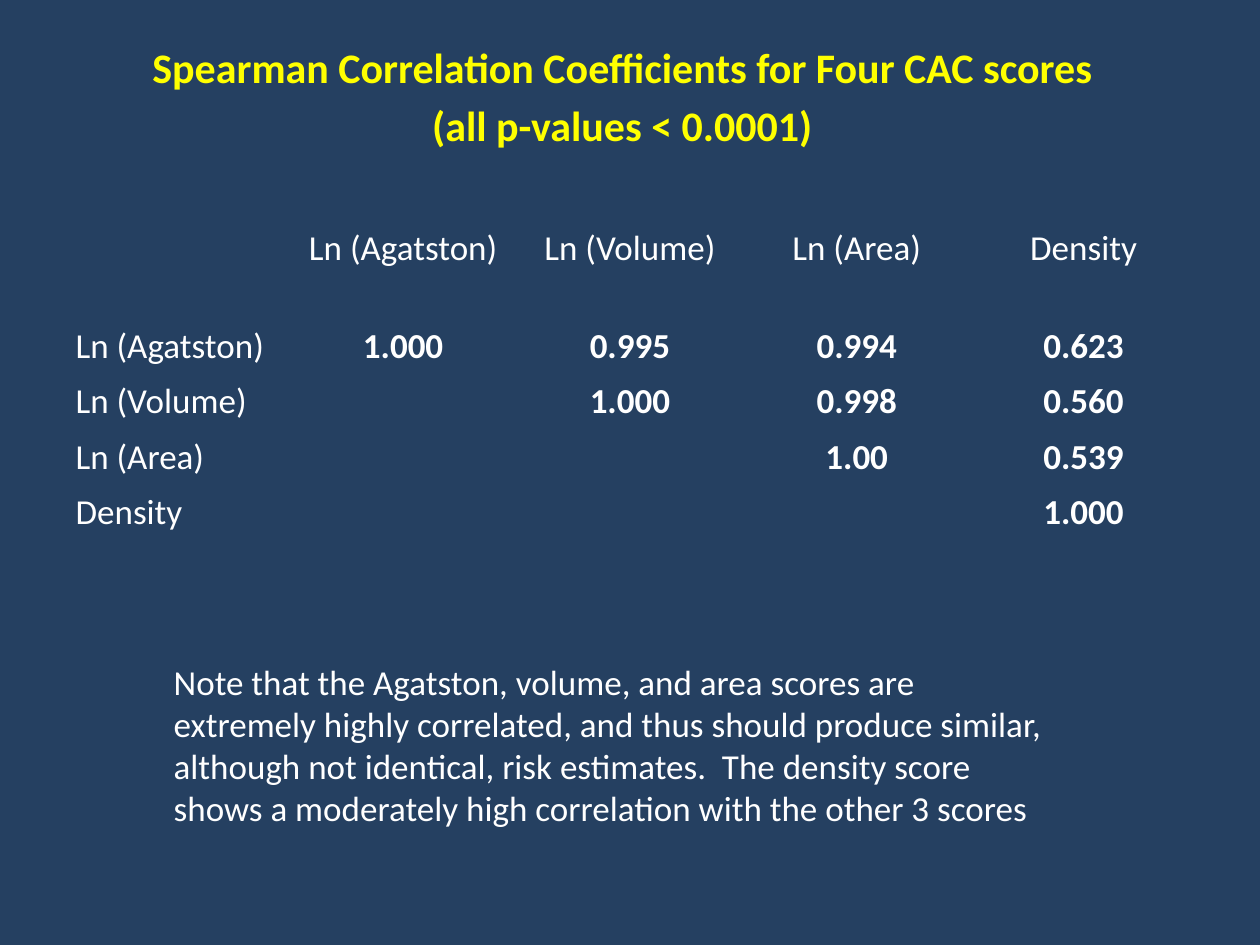
from dataclasses import dataclass

from lxml import etree
from pptx import Presentation
from pptx.dml.color import RGBColor
from pptx.enum.text import MSO_ANCHOR, MSO_AUTO_SIZE, PP_ALIGN
from pptx.oxml.ns import qn
from pptx.util import Inches, Pt

LEFT, CENTER = PP_ALIGN.LEFT, PP_ALIGN.CENTER
MIDDLE = MSO_ANCHOR.MIDDLE
NO_FIT = MSO_AUTO_SIZE.NONE


@dataclass(frozen=True)
class Theme:
    font: str = "Calibri"
    back: RGBColor = RGBColor(0x25, 0x40, 0x61)
    head: RGBColor = RGBColor(0xFF, 0xFF, 0x00)
    body: RGBColor = RGBColor(0xFF, 0xFF, 0xFF)
    head_size: int = 24
    body_size: int = 20


THEME = Theme()
TITLE = "Spearman Correlation Coefficients for Four CAC scores\v(all p-values < 0.0001)"
SCORES = ["Ln (Agatston)", "Ln (Volume)", "Ln (Area)", "Density"]
VALUES = [
    ["1.000", "0.995", "0.994", "0.623"],
    ["", "1.000", "0.998", "0.560"],
    ["", "", "1.00", "0.539"],
    ["", "", "", "1.000"],
]
NOTE = (
    "Note that the Agatston, volume, and area scores are extremely highly "
    "correlated, and thus should produce similar, although not identical, "
    "risk estimates.  The density score shows a moderately high correlation "
    "with the other 3 scores"
)


def write(frame, text, size, color, bold=False, align=LEFT):
    frame.text = text
    for para in frame.paragraphs:
        para.alignment = align
        for run in para.runs:
            font = run.font
            font.name, font.size, font.bold = THEME.font, Pt(size), bold
            font.color.rgb = color


def add_title(slide):
    title = slide.shapes.title
    title.left, title.top = Inches(0.44), Inches(0.28)
    title.width, title.height = Inches(9), Inches(0.9)
    frame = title.text_frame
    frame.auto_size = NO_FIT
    frame.vertical_anchor = MIDDLE
    write(frame, TITLE, THEME.head_size, THEME.head, True, CENTER)
    frame.paragraphs[0].line_spacing = 1.15


def clear_cell(cell):
    props = cell._tc.get_or_add_tcPr()
    for side in ("a:lnL", "a:lnR", "a:lnT", "a:lnB"):
        line = etree.SubElement(props, qn(side))
        etree.SubElement(line, qn("a:noFill"))
    cell.fill.background()


def add_grid(slide):
    rows = [["", *SCORES]]
    rows += [[name, *vals] for name, vals in zip(SCORES, VALUES)]
    size = len(rows)
    table = slide.shapes.add_table(
        size, size, Inches(0.5), Inches(1.75), Inches(9), Inches(2.54)
    ).table
    table.first_row = table.horz_banding = False
    for r, row in enumerate(rows):
        table.rows[r].height = Inches(0.44 if r else 0.78)
        for c, text in enumerate(row):
            cell = table.cell(r, c)
            clear_cell(cell)
            align = CENTER if c else LEFT
            bold = r > 0 and c > 0
            write(cell.text_frame, text, THEME.body_size, THEME.body, bold, align)


def add_note(slide):
    box = slide.shapes.add_textbox(
        Inches(1.28), Inches(5.19), Inches(7.12), Inches(1.45)
    )
    box.text_frame.word_wrap = True
    write(box.text_frame, NOTE, THEME.body_size, THEME.body)


def main():
    deck = Presentation()
    deck.slide_width, deck.slide_height = Inches(10), Inches(7.5)
    slide = deck.slides.add_slide(deck.slide_layouts[5])
    fill = slide.background.fill
    fill.solid()
    fill.fore_color.rgb = THEME.back
    add_title(slide)
    add_grid(slide)
    add_note(slide)
    deck.save("out.pptx")


if __name__ == "__main__":
    main()
